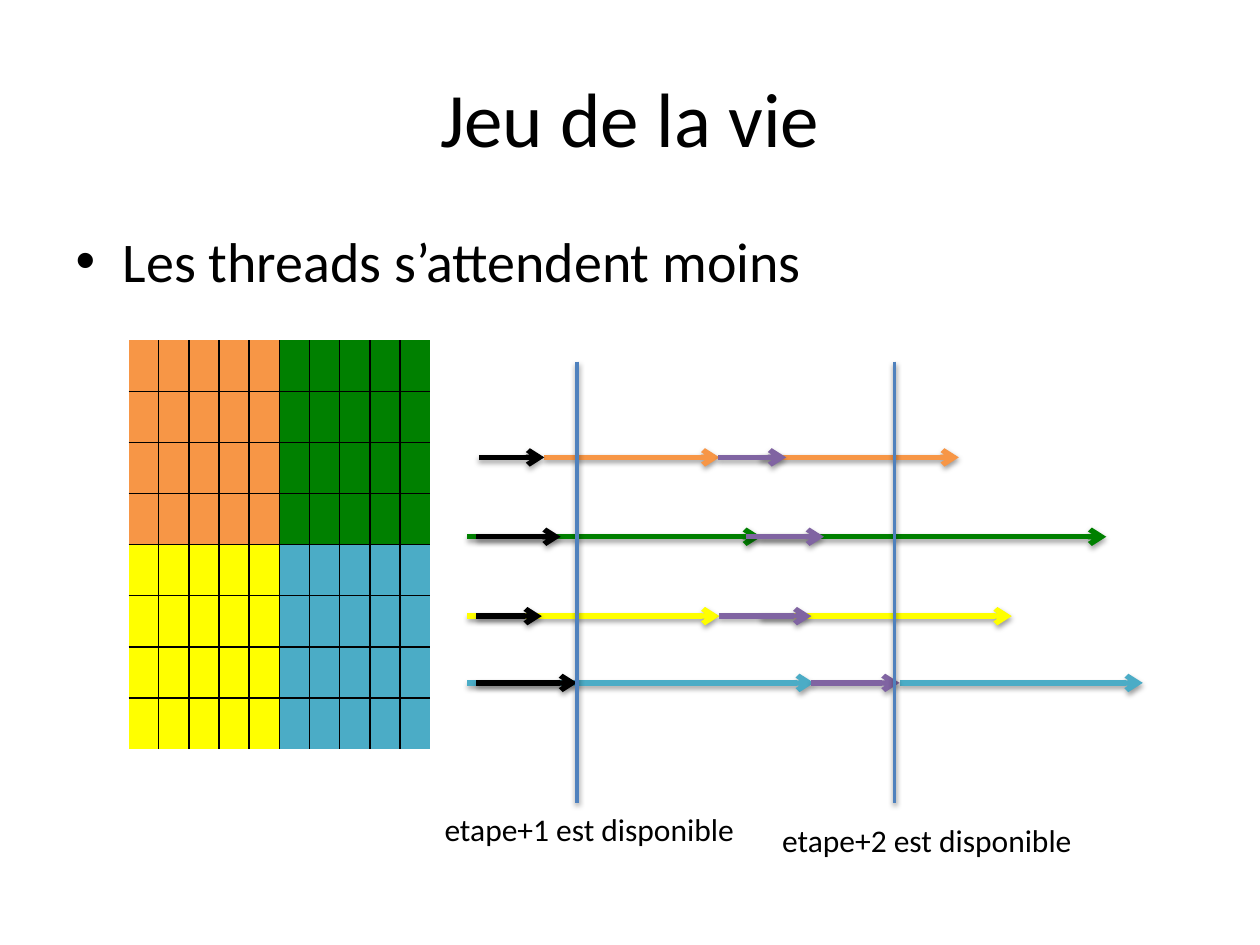
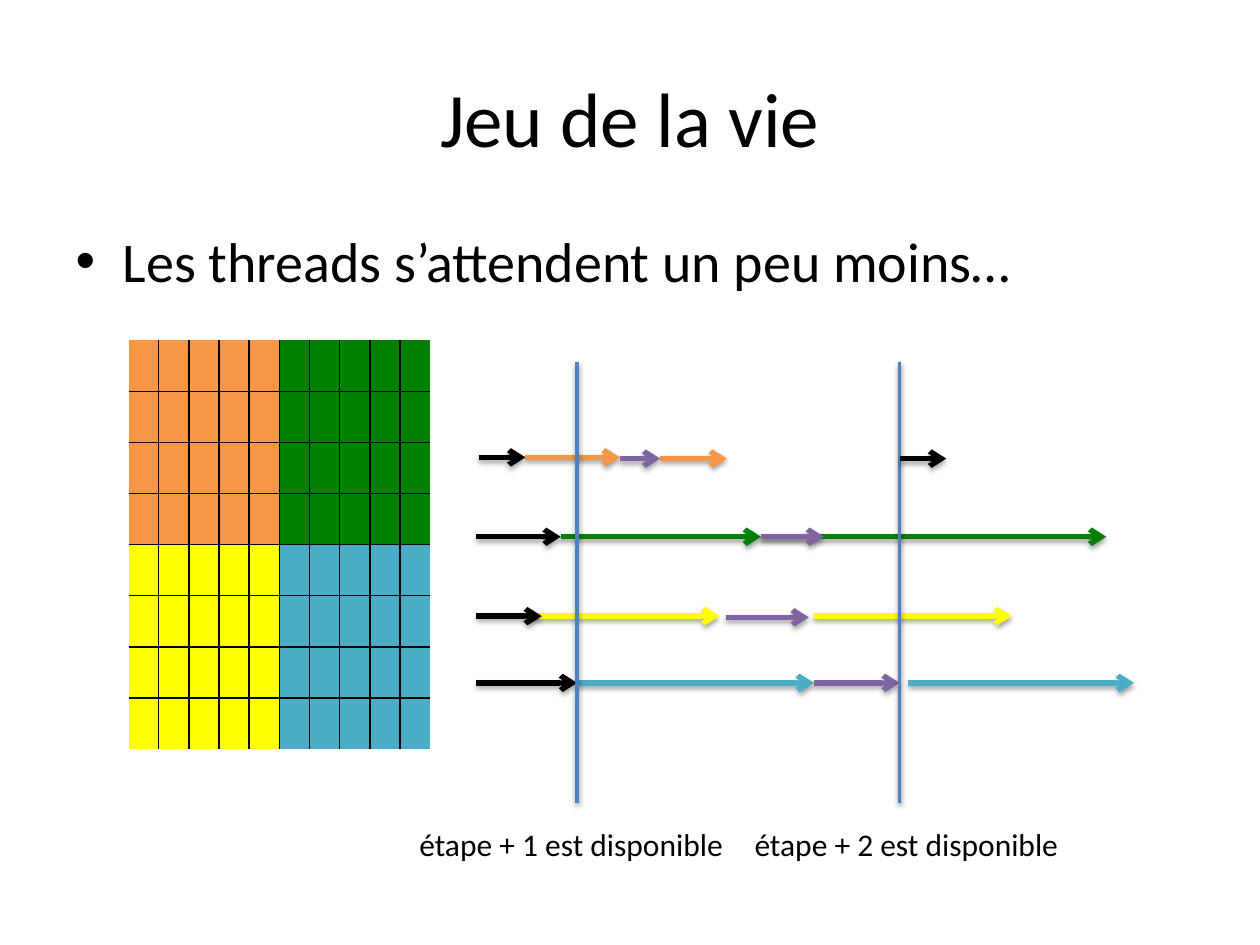
from typing import NamedTuple

from lxml.etree import SubElement
from pptx import Presentation
from pptx.dml.color import RGBColor
from pptx.enum.shapes import MSO_CONNECTOR as Connector
from pptx.enum.text import MSO_ANCHOR as Anchor, MSO_AUTO_SIZE as AutoSize, PP_ALIGN as Align
from pptx.oxml.ns import qn
from pptx.util import Inches, Pt

BLACK = RGBColor(0x00, 0x00, 0x00)
ORANGE = RGBColor(0xF7, 0x96, 0x46)
GREEN = RGBColor(0x00, 0x80, 0x00)
YELLOW = RGBColor(0xFF, 0xFF, 0x00)
CYAN = RGBColor(0x4B, 0xAC, 0xC6)
PURPLE = RGBColor(0x80, 0x64, 0xA2)
BLUE = RGBColor(0x4F, 0x81, 0xBD)

FONT = "Calibri"
GRID_ROWS, GRID_COLS = 8, 10
BARRIER_TOP, BARRIER_BOTTOM = 2.87, 6.37


class Lane(NamedTuple):
    color: RGBColor
    y: float


class Span(NamedTuple):
    start: float
    end: float
    drop: float = 0


class Shadow(NamedTuple):
    distance: float
    opacity: int


class Label(NamedTuple):
    text: str
    left: float
    top: float
    width: float


class Step(NamedTuple):
    """One span per thread, top to bottom; without a color each takes its thread's."""
    spans: list[Span]
    color: RGBColor | None = None


class Timeline(NamedTuple):
    bullet: str
    steps: list[Step]
    barriers: list[float]
    late_steps: list[Step]
    labels: list[Label]


THREADS = [Lane(ORANGE, 3.63), Lane(GREEN, 4.26), Lane(YELLOW, 4.89), Lane(CYAN, 5.42)]
LIGHT_SHADOW = Shadow(1.6, 38)
DEEP_SHADOW = Shadow(1.8, 35)

TIMELINES = [
    Timeline(
        "Les threads s’attendent moins",
        [
            Step([Span(4.32, 5.71), Span(3.71, 6.04), Span(3.71, 5.71), Span(3.71, 6.46)]),
            Step([Span(6.04, 7.61), Span(6.04, 8.78), Span(6.04, 8.03), Span(7.14, 9.07)]),
            Step([Span(3.8, 4.32), Span(3.78, 4.45), Span(3.78, 4.3), Span(3.78, 4.58)], BLACK),
            Step([Span(5.7, 6.24), Span(5.92, 6.54), Span(5.71, 6.44), Span(6.44, 7.14)], PURPLE),
        ],
        [4.58, 7.1],
        [],
        [Label("etape+1 est disponible", 3.43, 6.38, 2.53),
         Label("etape+2 est disponible", 6.11, 6.47, 2.53)],
    ),
    Timeline(
        "Les threads s’attendent un peu moins…",
        [
            Step([Span(4.17, 4.92), Span(4.45, 6.04), Span(4.17, 5.71), Span(4.58, 6.46)]),
            Step([Span(5.24, 5.77, 0.01), Span(6.04, 8.78), Span(6.46, 8.03), Span(7.21, 9)]),
            Step([Span(3.8, 4.17), Span(3.78, 4.45), Span(3.78, 4.3), Span(3.78, 4.58)], BLACK),
            Step([Span(4.92, 5.24, 0.01), Span(6.04, 6.54), Span(5.76, 6.42, 0.01),
                  Span(6.46, 7.14)], PURPLE),
        ],
        [4.58, 7.14],
        [Step([Span(7.14, 7.51, 0.01)], BLACK)],
        [Label("étape + 1 est disponible", 3.23, 6.5, 2.64),
         Label("étape + 2 est disponible", 5.89, 6.5, 2.64)],
    ),
]


def format_font(font, size: int) -> None:
    for name, value in {"name": FONT, "size": Pt(size)}.items():
        setattr(font, name, value)
    font.color.rgb = BLACK


def fill_placeholder(placeholder, text: str, size: int, box: tuple) -> None:
    for name, value in zip(("left", "top", "width", "height"), box):
        setattr(placeholder, name, Inches(value))
    placeholder.text_frame.text = text
    format_font(placeholder.text_frame.paragraphs[0].runs[0].font, size)


def add_color(parent, color: RGBColor):
    return SubElement(parent, qn("a:srgbClr"), val=str(color))


def add_line(slide, start: tuple, end: tuple, color: RGBColor, width: float,
             shadow: Shadow, arrow: bool = False) -> None:
    connector = slide.shapes.add_connector(
        Connector.STRAIGHT, *(Inches(v) for v in (*start, *end)))
    connector.line.color.rgb = color
    connector.line.width = Pt(width)
    if arrow:
        SubElement(connector.line._get_or_add_ln(), qn("a:tailEnd"), type="arrow")
    effects = SubElement(connector._element.spPr, qn("a:effectLst"))
    outer = SubElement(effects, qn("a:outerShdw"), blurRad=str(Pt(3.1)),
                       dist=str(Pt(shadow.distance)), dir="5400000", rotWithShape="0")
    SubElement(add_color(outer, BLACK), qn("a:alpha"), val=str(shadow.opacity * 1000))


def add_step(slide, step: Step) -> None:
    shadow = DEEP_SHADOW if step.color is not None else LIGHT_SHADOW
    for thread, span in zip(THREADS, step.spans):
        y = thread.y + span.drop
        color = step.color if step.color is not None else thread.color
        add_line(slide, (span.start, y), (span.end, y), color, 3, shadow, arrow=True)


def add_border(cell, side: str, visible: bool) -> None:
    border = SubElement(cell._tc.get_or_add_tcPr(), qn(f"a:ln{side}"), w=str(Pt(1)))
    if visible:
        add_color(SubElement(border, qn("a:solidFill")), BLACK)
    else:
        SubElement(border, qn("a:noFill"))


def add_game_grid(slide) -> None:
    """Four quadrants, one per thread, with black lines between the cells."""
    grid = slide.shapes.add_table(GRID_ROWS, GRID_COLS, Inches(1.02), Inches(2.7),
                                  Inches(2.28), Inches(3.2)).table
    for row in range(GRID_ROWS):
        for col in range(GRID_COLS):
            cell = grid.cell(row, col)
            inner_sides = {"L": col > 0, "R": col < GRID_COLS - 1,
                           "T": row > 0, "B": row < GRID_ROWS - 1}
            for side, visible in inner_sides.items():
                add_border(cell, side, visible)
            quadrant = 2 * (row * 2 // GRID_ROWS) + col * 2 // GRID_COLS
            cell.fill.solid()
            cell.fill.fore_color.rgb = THREADS[quadrant].color


def add_label(slide, label: Label) -> None:
    frame = slide.shapes.add_textbox(Inches(label.left), Inches(label.top),
                                     Inches(label.width), Inches(0.4)).text_frame
    frame.text = label.text
    for name, value in {"word_wrap": False, "auto_size": AutoSize.SHAPE_TO_FIT_TEXT}.items():
        setattr(frame, name, value)
    format_font(frame.paragraphs[0].runs[0].font, 18)


def add_timeline_slide(prs, timeline: Timeline) -> None:
    slide = prs.slides.add_slide(prs.slide_layouts[1])
    title, body = slide.placeholders
    fill_placeholder(title, "Jeu de la vie", 44, (0.5, 0.3, 9, 1.25))
    title.text_frame.vertical_anchor = Anchor.MIDDLE
    title.text_frame.paragraphs[0].alignment = Align.CENTER
    fill_placeholder(body, timeline.bullet, 32, (0.5, 1.75, 9, 4.95))
    add_game_grid(slide)
    for step in timeline.steps:
        add_step(slide, step)
    for x in timeline.barriers:
        add_line(slide, (x, BARRIER_TOP), (x, BARRIER_BOTTOM), BLUE, 2, LIGHT_SHADOW)
    for step in timeline.late_steps:
        add_step(slide, step)
    for label in timeline.labels:
        add_label(slide, label)


def main() -> None:
    prs = Presentation()
    prs.slide_width, prs.slide_height = Inches(10), Inches(7.5)
    for timeline in TIMELINES:
        add_timeline_slide(prs, timeline)
    prs.save("out.pptx")


if __name__ == "__main__":
    main()
